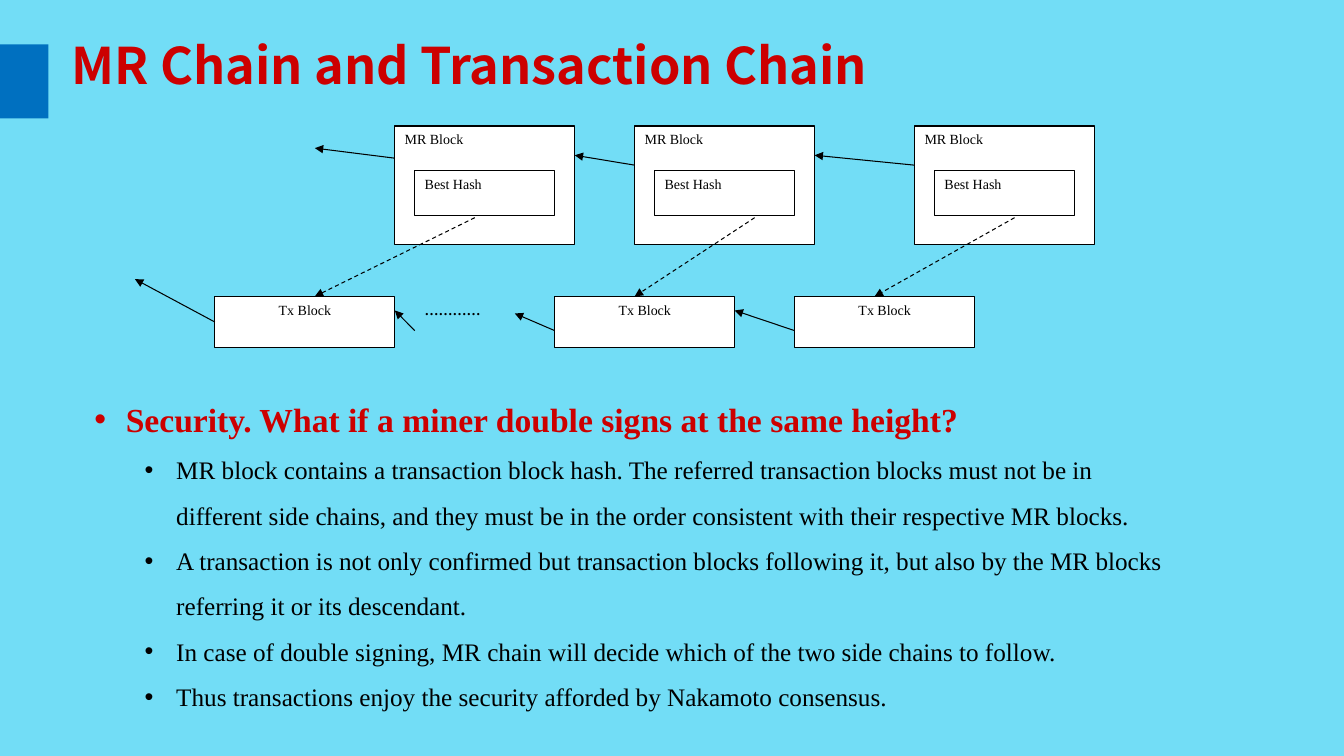
from lxml import etree
from pptx import Presentation
from pptx.dml.color import RGBColor
from pptx.enum.dml import MSO_LINE
from pptx.enum.shapes import MSO_CONNECTOR, MSO_SHAPE
from pptx.enum.text import MSO_ANCHOR, PP_ALIGN
from pptx.oxml.ns import qn
from pptx.util import Pt

RECTANGLE = MSO_SHAPE.RECTANGLE
STRAIGHT = MSO_CONNECTOR.STRAIGHT
DASH = MSO_LINE.DASH
TOP, MIDDLE = MSO_ANCHOR.TOP, MSO_ANCHOR.MIDDLE
LEFT, CENTER, JUSTIFY = PP_ALIGN.LEFT, PP_ALIGN.CENTER, PP_ALIGN.JUSTIFY
LEFT_SIDE = 1

SKY = RGBColor(0x72, 0xDD, 0xF6)
BLUE = RGBColor(0x00, 0x70, 0xC0)
RED = RGBColor(0xCC, 0x00, 0x00)
BLACK = RGBColor(0x00, 0x00, 0x00)
WHITE = RGBColor(0xFF, 0xFF, 0xFF)
TITLE_FONT = "Noto Sans CJK SC"
BODY_FONT = "Times New Roman"

COLUMN = 14.28
MR_COLUMNS = (13, 25, 39)
TX_COLUMNS = (4, 21, 33)
TX_TOP = 121.7
HASH_BOTTOM = 65.5
MR_ARROWS = ((13, 23, 9, 15.8), (25, 28, 22, 20.9), (39, 28, 34, 20.9))
TX_ARROWS = ((14, 146.2, 13, 131.8), (21, 146.2, 19, 133.9),
             (33, 146.2, 30, 131.8))
HASH_ARROWS = ((17, 9), (31, 25), (44, 37))

QUESTION = "Security. What if a miner double signs at the same height?"
ANSWERS = (
    "MR block contains a transaction block hash. The referred transaction "
    "blocks must not be in different side chains, and they must be in the "
    "order consistent with their respective MR blocks.",
    "A transaction is not only confirmed but transaction blocks following it, "
    "but also by the MR blocks referring it or its descendant.",
    "In case of double signing, MR chain will decide which of the two side "
    "chains to follow.",
    "Thus transactions enjoy the security afforded by Nakamoto consensus.",
)


def add_text(paragraph, text, size, color=BLACK, font=BODY_FONT, bold=False,
             align=LEFT):
    paragraph.alignment = align
    run = paragraph.add_run()
    run.text = text
    run.font.size = Pt(size)
    run.font.name = font
    run.font.bold = bold
    run.font.color.rgb = color


def text_frame_at(slide, left, top, width, height, anchor=TOP):
    frame = slide.shapes.add_textbox(
        Pt(left), Pt(top), Pt(width), Pt(height)).text_frame
    frame.word_wrap = True
    frame.vertical_anchor = anchor
    return frame


def add_block(slide, left, top, width, height, label, align):
    block = slide.shapes.add_shape(
        RECTANGLE, Pt(left), Pt(top), Pt(width), Pt(height))
    block.shadow.inherit = False
    block.fill.solid()
    block.fill.fore_color.rgb = WHITE
    block.line.color.rgb = BLACK
    block.line.width = Pt(0.75)
    block.text_frame.word_wrap = True
    block.text_frame.vertical_anchor = TOP
    add_text(block.text_frame.paragraphs[0], label, 10, align=align)
    return block


def add_arrow(slide, x1, y1, x2, y2, dash=None):
    arrow = slide.shapes.add_connector(
        STRAIGHT, Pt(x1), Pt(y1), Pt(x2), Pt(y2))
    arrow.line.color.rgb = BLACK
    arrow.line.width = Pt(0.75)
    if dash:
        arrow.line.dash_style = dash
    properties = arrow.line._get_or_add_ln()
    etree.SubElement(properties, qn("a:tailEnd"), type="triangle")
    etree.SubElement(arrow._element.spPr, qn("a:effectLst"))
    return arrow


def add_bullet(paragraph, indent):
    paragraph.line_spacing = 1.5
    properties = paragraph._p.get_or_add_pPr()
    properties.set("marL", str(Pt(indent)))
    properties.set("indent", str(-Pt(22.5)))
    etree.SubElement(properties, qn("a:buFont"), typeface="Arial")
    etree.SubElement(properties, qn("a:buChar"), char="•")


def add_title(slide, left, top, width, height):
    marker = slide.shapes.add_shape(
        RECTANGLE, Pt(left), Pt(top + 11), Pt(34.5), Pt(52.8))
    marker.shadow.inherit = False
    marker.fill.solid()
    marker.fill.fore_color.rgb = BLUE
    marker.line.fill.background()
    title = text_frame_at(slide, left + 44, top, width - 44, height, MIDDLE)
    add_text(title.paragraphs[0], "MR Chain and Transaction Chain", 36, RED,
             TITLE_FONT, True)


def add_chains(slide, left, top):
    def x(column):
        return left + column * COLUMN

    def arrow(start, start_y, end, end_y, dash=None):
        return add_arrow(slide, x(start), top + start_y, x(end), top + end_y,
                         dash)

    tx_blocks = [
        add_block(slide, x(column), top + TX_TOP, 9 * COLUMN, 36.7,
                  "Tx Block", CENTER)
        for column in TX_COLUMNS]
    for ends in TX_ARROWS:
        arrow(*ends)
    first_tx_arrow = arrow(4, 140, 0, 109.4)
    first_tx_arrow.begin_connect(tx_blocks[0], LEFT_SIDE)

    for column in MR_COLUMNS:
        add_block(slide, x(column), top, 9 * COLUMN, 85, "MR Block", JUSTIFY)
        add_block(slide, x(column + 1), top + 31.7, 7 * COLUMN, 32,
                  "Best Hash", JUSTIFY)
    for ends in MR_ARROWS:
        arrow(*ends)
    for hash_column, tx_column in HASH_ARROWS:
        arrow(hash_column, HASH_BOTTOM, tx_column, TX_TOP, DASH)

    earlier_blocks = text_frame_at(
        slide, x(14), top + TX_TOP, 7 * COLUMN, 32)
    add_text(earlier_blocks.paragraphs[0], "…………", 10, bold=True,
             align=JUSTIFY)


def add_security(slide, left, top, width, height):
    security = text_frame_at(slide, left, top, width, height)
    question = security.paragraphs[0]
    add_bullet(question, 22.5)
    add_text(question, QUESTION, 24, RED, bold=True)
    for text in ANSWERS:
        answer = security.add_paragraph()
        answer.level = 1
        add_bullet(answer, 58.5)
        add_text(answer, text, 18)


def main():
    deck = Presentation()
    deck.slide_width, deck.slide_height = Pt(960), Pt(540)
    slide = deck.slides.add_slide(deck.slide_layouts[6])
    slide.background.fill.solid()
    slide.background.fill.fore_color.rgb = SKY
    add_title(slide, 0, 20.7, 681, 50.4)
    add_chains(slide, 96.4, 90)
    add_security(slide, 60.3, 267.1, 779, 245.5)
    deck.save("out.pptx")


if __name__ == "__main__":
    main()
